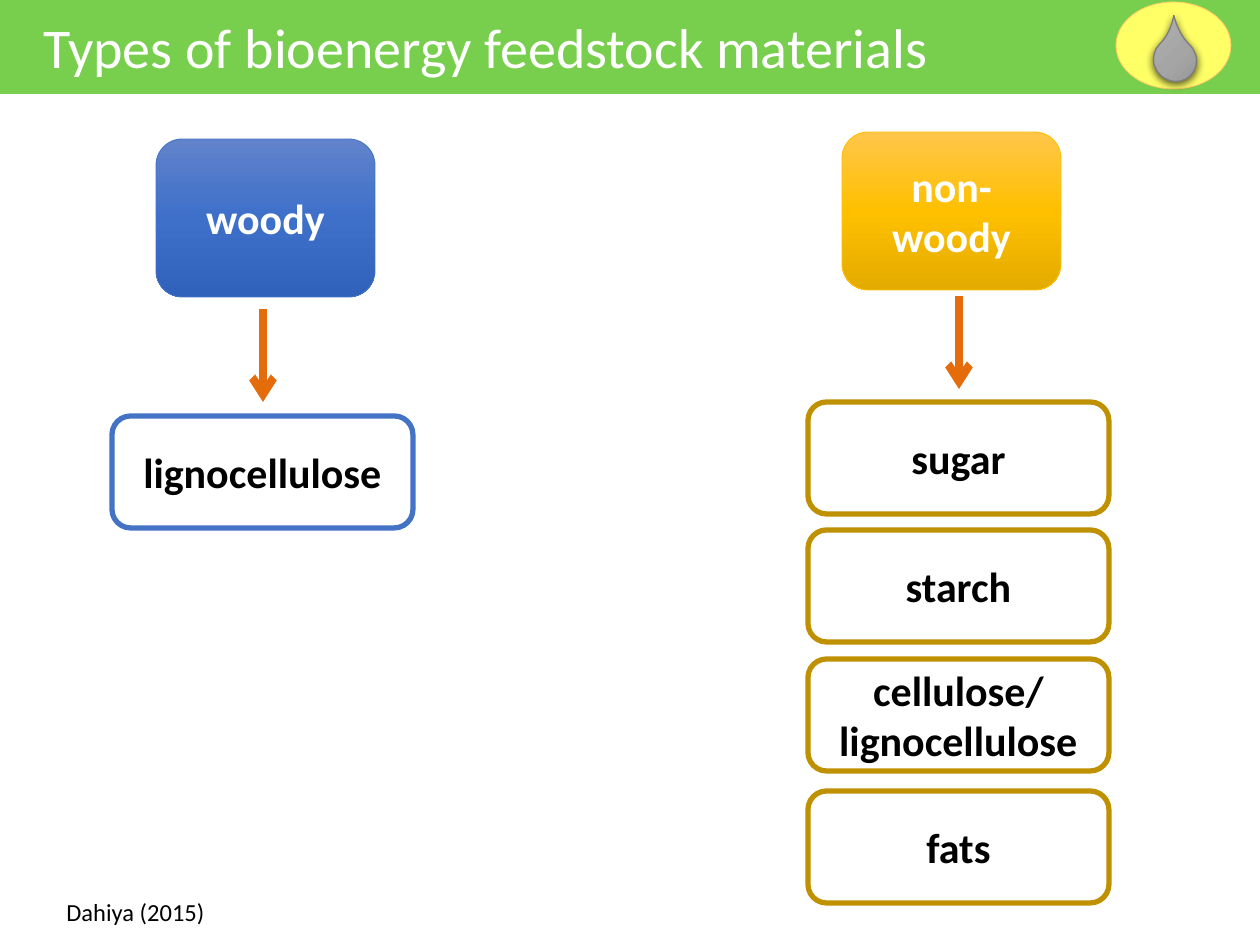
from copy import deepcopy
from dataclasses import dataclass

from pptx import Presentation
from pptx.dml.color import RGBColor
from pptx.enum.shapes import MSO_CONNECTOR, MSO_SHAPE
from pptx.enum.text import MSO_ANCHOR, MSO_AUTO_SIZE, PP_ALIGN
from pptx.oxml import parse_xml
from pptx.oxml.ns import nsdecls, qn
from pptx.shapes.autoshape import Shape
from pptx.slide import Slide
from pptx.util import Emu, Pt

PX = 914400 / 126
FONT = "Calibri"
HUES = {
    "band": "78CE4D", "white": "FFFFFF", "black": "000000",
    "blue": "4472C4", "gold": "FFC000", "ochre": "BF9000",
    "arrow": "E46C0A", "sun": "FFFF66", "rim": "FFCC66", "edge": "7C7C7C",
}
FADES = {
    "blue": ("6183CB", "3E70CA", "3062BB"),
    "gold": ("FFC64B", "FFC000", "E3AB00"),
    "gray": ("AFAFAF", "A5A5A5", "939393"),
}


@dataclass(frozen=True)
class Box:
    text: str
    left: int
    top: int
    line: str
    fade: str = ""


@dataclass(frozen=True)
class Label:
    text: str
    left: int
    top: int
    width: int
    height: int
    size: int
    hue: str


@dataclass(frozen=True)
class Arrow:
    x: int
    top: int


HEADS = (
    Box("woody", 156, 139, "blue", "blue"),
    Box("non-woody", 842, 132, "gold", "gold"),
)
KINDS = (
    Box("lignocellulose", 112, 416, "blue"),
    Box("sugar", 808, 402, "ochre"),
    Box("starch", 808, 530, "ochre"),
    Box("cellulose/\nlignocellulose", 808, 659, "ochre"),
    Box("fats", 808, 791, "ochre"),
)
LABELS = (
    Label("Types of bioenergy feedstock materials", 31, 6, 1065, 81, 32, "white"),
    Label("Dahiya (2015)", 54, 891, 165, 43, 14, "black"),
)
ARROWS = (Arrow(263, 309), Arrow(959, 296))


def px(num: int) -> Emu:
    return Emu(round(num * PX))


def rgb(hue: str) -> RGBColor:
    return RGBColor.from_string(HUES[hue])


def blend(shape: Shape, fade: str) -> None:
    fill = shape.fill
    fill.gradient()
    fill.gradient_angle = 270
    stops = shape._element.spPr.find(qn("a:gradFill")).find(qn("a:gsLst"))
    stops.append(deepcopy(stops[-1]))
    for stop, tone, spot in zip(fill.gradient_stops, FADES[fade], (0, 0.5, 1)):
        stop.color.rgb = RGBColor.from_string(tone)
        stop.position = spot


def add_form(slide: Slide, kind: MSO_SHAPE, left: int, top: int, width: int,
             height: int, fill: str = "", line: str = "", weight: float = 0) -> Shape:
    shape = slide.shapes.add_shape(kind, px(left), px(top), px(width), px(height))
    shape.shadow.inherit = False
    if fill in FADES:
        blend(shape, fill)
    elif fill:
        shape.fill.solid()
        shape.fill.fore_color.rgb = rgb(fill)
    else:
        shape.fill.background()
    if line:
        shape.line.color.rgb = rgb(line)
        shape.line.width = Pt(weight)
    else:
        shape.line.fill.background()
    return shape


def write(shape: Shape, text: str, size: int, hue: str, bold: bool,
          align: PP_ALIGN) -> None:
    shape.text_frame.text = text
    for para in shape.text_frame.paragraphs:
        para.alignment = align
        font = para.font
        font.name, font.size, font.bold = FONT, Pt(size), bold
        font.color.rgb = rgb(hue)


def add_box(slide: Slide, box: Box, width: int, height: int, weight: float) -> None:
    shape = add_form(slide, MSO_SHAPE.ROUNDED_RECTANGLE, box.left, box.top,
                     width, height, box.fade, box.line, weight)
    shape.text_frame.word_wrap = True
    shape.text_frame.vertical_anchor = MSO_ANCHOR.MIDDLE
    write(shape, box.text, 24, "white" if box.fade else "black", True, PP_ALIGN.CENTER)


def add_label(slide: Slide, label: Label) -> None:
    shape = slide.shapes.add_textbox(px(label.left), px(label.top),
                                     px(label.width), px(label.height))
    shape.text_frame.word_wrap = False
    shape.text_frame.auto_size = MSO_AUTO_SIZE.SHAPE_TO_FIT_TEXT
    write(shape, label.text, label.size, label.hue, False, PP_ALIGN.LEFT)


def add_arrow(slide: Slide, arrow: Arrow) -> None:
    link = slide.shapes.add_connector(MSO_CONNECTOR.STRAIGHT, px(arrow.x), px(arrow.top),
                                      px(arrow.x), px(arrow.top + 93))
    link.line.color.rgb = rgb("arrow")
    link.line.width = Pt(4.5)
    link.line._get_or_add_ln().append(parse_xml(f'<a:tailEnd {nsdecls("a")} type="arrow"/>'))
    link._element.spPr.append(parse_xml(f'<a:effectLst {nsdecls("a")}/>'))


def add_drop(slide: Slide) -> None:
    add_form(slide, MSO_SHAPE.OVAL, 1116, 2, 115, 87, "sun", "rim", 0.5)
    drop = add_form(slide, MSO_SHAPE.TEAR, 1154, 38, 42, 44, "gray", "edge", 0.75)
    drop.adjustments[0] = 1.465
    drop.rotation = 314.8
    glow = drop._element.spPr.find(qn("a:effectLst"))
    glow.append(parse_xml(
        f'<a:outerShdw {nsdecls("a")} blurRad="{Pt(4.5)}" dist="{Pt(1.5)}" '
        f'dir="5400000" algn="ctr" rotWithShape="0"><a:srgbClr val="{HUES["black"]}">'
        '<a:alpha val="63000"/></a:srgbClr></a:outerShdw>'))


def main() -> None:
    deck = Presentation()
    deck.slide_width, deck.slide_height = px(1260), px(945)
    slide = deck.slides.add_slide(deck.slide_layouts[6])
    add_form(slide, MSO_SHAPE.RECTANGLE, 0, 0, 1261, 94, "band")
    for label in LABELS:
        add_label(slide, label)
    for box in HEADS:
        add_box(slide, box, 219, 158, 0.5)
    for arrow in ARROWS:
        add_arrow(slide, arrow)
    for box in KINDS:
        add_box(slide, box, 301, 112, 3)
    add_drop(slide)
    deck.save("out.pptx")


if __name__ == "__main__":
    main()
